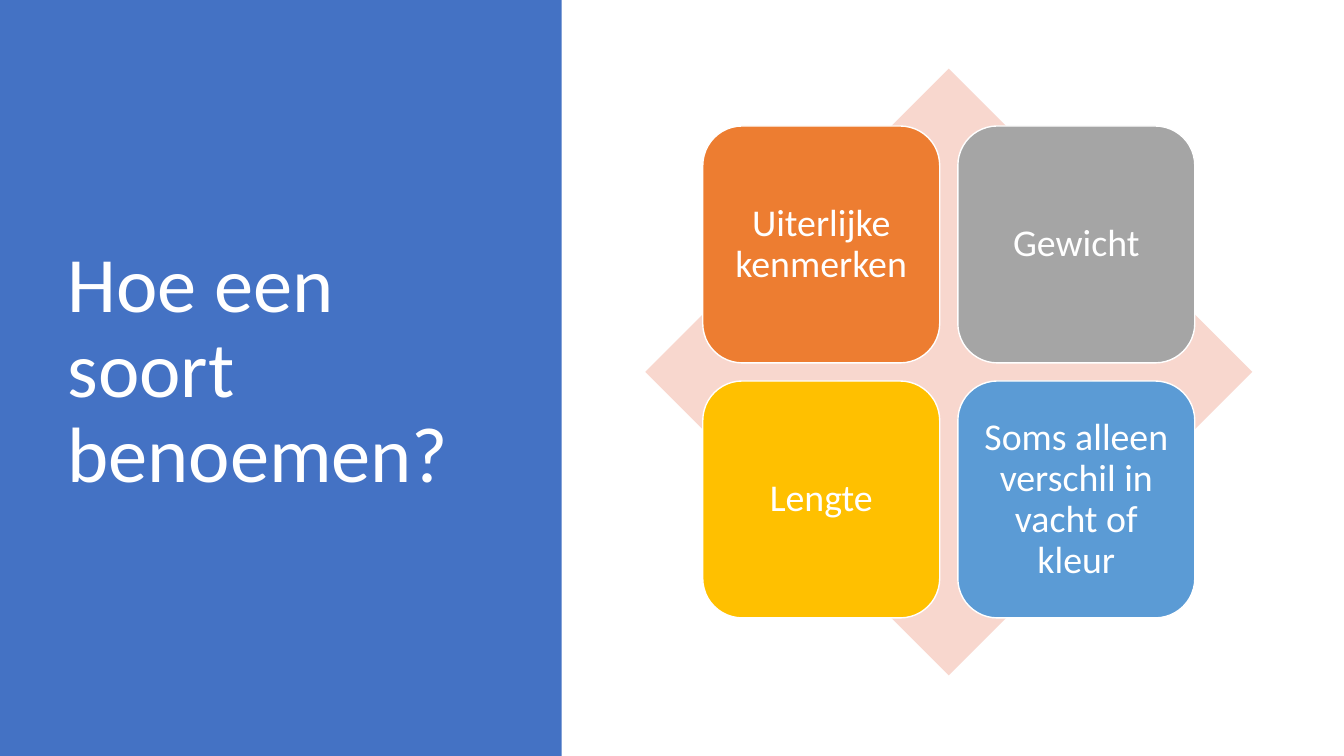
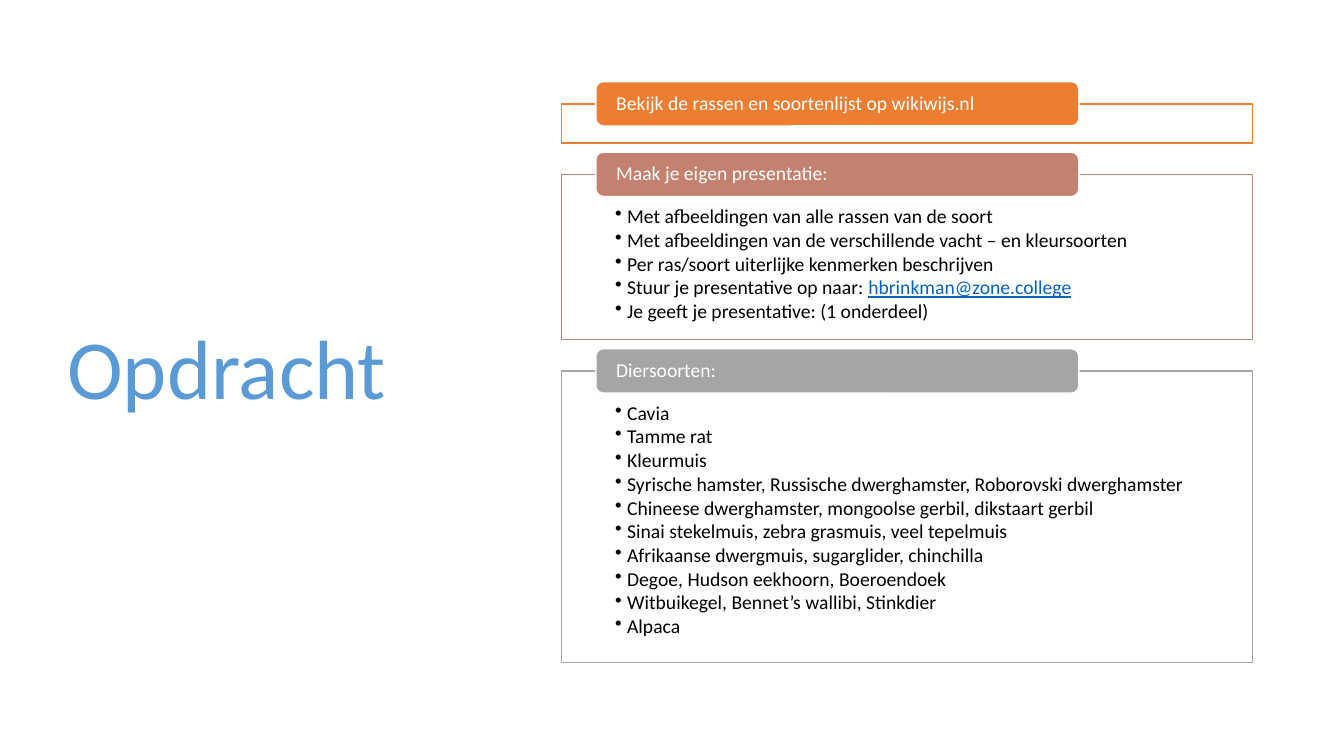
from lxml.etree import SubElement
from pptx import Presentation
from pptx.dml.color import RGBColor
from pptx.enum.shapes import MSO_SHAPE
from pptx.enum.text import MSO_ANCHOR, PP_ALIGN
from pptx.oxml.ns import qn
from pptx.util import Pt

PX = 9144  # 100 px to the inch
FONT = "Calibri"
LINE_SPACING = 0.9
COLORS = {
    "white": "FFFFFF",
    "black": "000000",
    "panel": "4472C4",
    "diamond": "F8D7CE",
    "orange": "ED7D31",
    "rose": "C48170",
    "gray": "A5A5A5",
    "yellow": "FFC000",
    "blue": "5B9BD5",
    "address": "0563C1",
}

ADDRESS = "hbrinkman@zone.college"
TRAITS = [
    ("Uiterlijke kenmerken", "orange"),
    ("Gewicht", "gray"),
    ("Lengte", "yellow"),
    ("Soms alleen verschil in vacht of kleur", "blue"),
]
SECTIONS = [
    ("Bekijk de rassen en soortenlijst op wikiwijs.nl", "orange", 39, []),
    ("Maak je eigen presentatie:", "rose", 164, [
        "Met afbeeldingen van alle rassen van de soort",
        "Met afbeeldingen van de verschillende vacht – en kleursoorten",
        "Per ras/soort uiterlijke kenmerken beschrijven",
        f"Stuur je presentative op naar: {ADDRESS}",
        "Je geeft je presentative: (1 onderdeel)",
    ]),
    ("Diersoorten:", "gray", 289, [
        "Cavia",
        "Tamme rat",
        "Kleurmuis",
        "Syrische hamster, Russische dwerghamster, Roborovski dwerghamster",
        "Chineese dwerghamster, mongoolse gerbil, dikstaart gerbil",
        "Sinai stekelmuis, zebra grasmuis, veel tepelmuis",
        "Afrikaanse dwergmuis, sugarglider, chinchilla",
        "Degoe, Hudson eekhoorn, Boeroendoek",
        "Witbuikegel, Bennet’s wallibi, Stinkdier",
        "Alpaca",
    ]),
]


def rgb(color):
    return RGBColor.from_string(COLORS[color])


def emu(*lengths):
    return [length * PX for length in lengths]


def add_panel(slide, preset, box, fill, line=None):
    panel = slide.shapes.add_shape(preset, *emu(*box))
    panel.shadow.inherit = False
    panel.fill.solid()
    panel.fill.fore_color.rgb = rgb(fill)
    if line:
        panel.line.color.rgb = rgb(line)
        panel.line.width = Pt(1)
    else:
        panel.line.fill.background()
    return panel


def set_frame(frame, anchor, insets):
    """Wrap the text; insets run left, top, right, bottom."""
    frame.word_wrap = True
    frame.vertical_anchor = anchor
    (frame.margin_left, frame.margin_top,
     frame.margin_right, frame.margin_bottom) = emu(*insets)


def style_paragraph(paragraph, size, color, align=PP_ALIGN.LEFT):
    paragraph.alignment = align
    paragraph.line_spacing = LINE_SPACING
    paragraph.font.name = FONT
    paragraph.font.size = Pt(size)
    paragraph.font.color.rgb = rgb(color)


def write_line(frame, text, size, color, align=PP_ALIGN.LEFT):
    paragraph = frame.paragraphs[0]
    paragraph.text = text
    style_paragraph(paragraph, size, color, align)


def add_title(slide, text, size, color):
    frame = slide.shapes.add_textbox(*emu(57, 68, 416, 602)).text_frame
    set_frame(frame, MSO_ANCHOR.MIDDLE, (10, 5, 10, 5))
    write_line(frame, text, size, color)


def write_bullets(frame, items):
    set_frame(frame, MSO_ANCHOR.TOP, (53, 32, 53, 11))
    for index, item in enumerate(items):
        paragraph = frame.add_paragraph() if index else frame.paragraphs[0]
        properties = paragraph._p.get_or_add_pPr()
        properties.set("marL", str(12 * PX))
        properties.set("indent", str(-12 * PX))
        SubElement(properties, qn("a:buChar"), char="•")
        lead, address, _ = item.partition(ADDRESS)
        paragraph.add_run().text = lead
        if address:
            address_run = paragraph.add_run()
            address_run.text = address
            address_run.font.color.rgb = rgb("address")
            address_run.font.underline = True
        style_paragraph(paragraph, 14, "black")
        paragraph.space_after = Pt(1.8)


def add_trait_tiles(slide):
    side, gap, left, top = 235, 18, 697, 125
    for index, (trait, color) in enumerate(TRAITS):
        row, column = divmod(index, 2)
        box = (left + column * (side + gap), top + row * (side + gap), side, side)
        tile = add_panel(slide, MSO_SHAPE.ROUNDED_RECTANGLE, box, color, "white")
        set_frame(tile.text_frame, MSO_ANCHOR.MIDDLE, (11, 11, 11, 11))
        write_line(tile.text_frame, trait, 27, "white", PP_ALIGN.CENTER)


def add_sections(slide):
    top, gap, overhang = 103, 31, 22
    for heading, color, height, items in SECTIONS:
        body = add_panel(slide, MSO_SHAPE.RECTANGLE, (557, top, 685, height), "white", color)
        if items:
            write_bullets(body.text_frame, items)
        tab = add_panel(slide, MSO_SHAPE.ROUNDED_RECTANGLE,
                        (591, top - overhang, 479, 2 * overhang), color, "white")
        set_frame(tab.text_frame, MSO_ANCHOR.MIDDLE, (18, 0, 18, 0))
        write_line(tab.text_frame, heading, 14, "white")
        top += height + gap


def build_naming_slide(slide):
    add_panel(slide, MSO_SHAPE.RECTANGLE, (0, 0, 557, 750), "panel")
    add_title(slide, "Hoe een soort benoemen?", 56, "white")
    add_panel(slide, MSO_SHAPE.DIAMOND, (640, 68, 602, 602), "diamond")
    add_trait_tiles(slide)


def build_assignment_slide(slide):
    add_title(slide, "Opdracht", 60, "blue")
    add_sections(slide)


def main():
    deck = Presentation()
    deck.slide_width, deck.slide_height = emu(1333, 750)
    blank = deck.slide_layouts[6]
    for build in (build_naming_slide, build_assignment_slide):
        build(deck.slides.add_slide(blank))
    deck.save("out.pptx")


if __name__ == "__main__":
    main()
